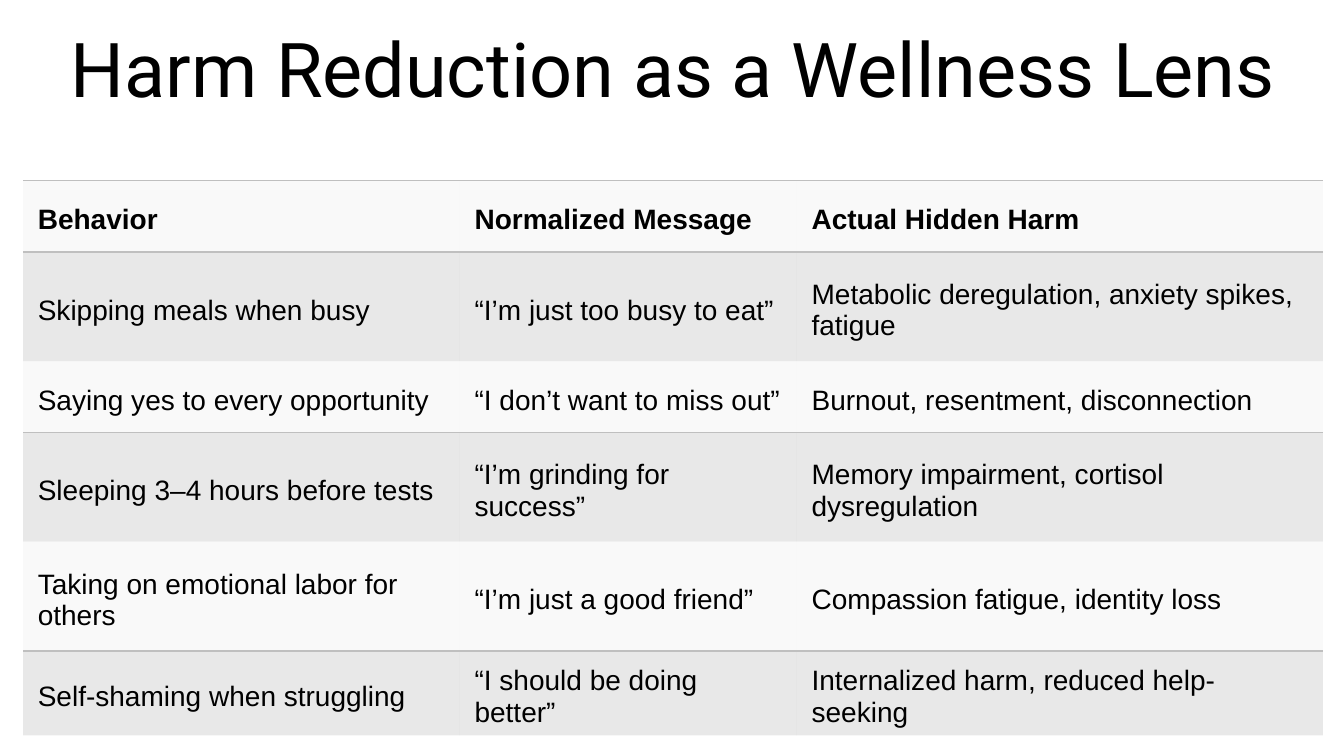
from lxml.etree import SubElement
from pptx import Presentation
from pptx.dml.color import RGBColor
from pptx.enum.text import MSO_ANCHOR, PP_ALIGN
from pptx.oxml.ns import qn
from pptx.util import Emu, Pt

NO_STYLE = "{2D5ABB26-0587-4C30-8999-92F81FD0307C}"
BLACK, WHITE, PALE, GREY = "000000", "FFFFFF", "F2F2F2", "BFBFBF"
COLUMN_WIDTHS = [416, 321, 501]
ROW_HEIGHTS = [68, 104, 68, 104, 104, 80]
ROWS = [
    ["Behavior", "Normalized Message", "Actual Hidden Harm"],
    ["Skipping meals when busy", "“I’m just too busy to eat”",
     "Metabolic deregulation, anxiety spikes, fatigue"],
    ["Saying yes to every opportunity", "“I don’t want to miss out”",
     "Burnout, resentment, disconnection"],
    ["Sleeping 3–4 hours before tests", "“I’m grinding for success”",
     "Memory impairment, cortisol dysregulation"],
    ["Taking on emotional labor for others", "“I’m just a good friend”",
     "Compassion fatigue, identity loss"],
    ["Self-shaming when struggling", "“I should be doing better”",
     "Internalized harm, reduced help-seeking"],
]


def px(n):
    return Emu(n * 9525)


def rgb(color):
    return RGBColor.from_string(color)


def set_font(p, name, size, bold=False):
    p.font.name = name
    p.font.size = Pt(size)
    p.font.bold = bold
    p.font.color.rgb = rgb(BLACK)


def add_title(s, text):
    title = s.shapes.title
    title.left, title.top, title.width, title.height = px(1), px(14), px(1280), px(100)
    tf = title.text_frame
    tf.text = text
    tf.word_wrap = True
    tf.vertical_anchor = MSO_ANCHOR.MIDDLE
    p = tf.paragraphs[0]
    p.alignment = PP_ALIGN.CENTER
    set_font(p, "Roboto", 54)


def add_border(cell, side):
    ln = SubElement(cell._tc.get_or_add_tcPr(), qn(f"a:{side}"), w=str(Pt(1)))
    SubElement(SubElement(ln, qn("a:solidFill")), qn("a:srgbClr"), val=GREY)


def fill_cell(cell, color, opacity):
    cell.fill.solid()
    cell.fill.fore_color.rgb = rgb(color)
    clr = cell._tc.tcPr.find(f"{qn('a:solidFill')}/{qn('a:srgbClr')}")
    SubElement(clr, qn("a:alpha"), val=str(opacity * 1000))


def format_cell(cell, text, row):
    cell.text = text
    cell.vertical_anchor = MSO_ANCHOR.MIDDLE
    cell.margin_left = cell.margin_top = cell.margin_right = px(14)
    cell.margin_bottom = px(7)
    set_font(cell.text_frame.paragraphs[0], "Arial", 20, bold=row == 0)
    # Pale rows are ruled below, and the header above too
    if row == 0:
        add_border(cell, "lnT")
    if row % 2 == 0:
        add_border(cell, "lnB")
        fill_cell(cell, PALE, 45)
    else:
        fill_cell(cell, GREY, 35)


def add_harm_table(s):
    frame = s.shapes.add_table(len(ROWS), len(COLUMN_WIDTHS), px(22), px(172),
                               px(sum(COLUMN_WIDTHS)), px(sum(ROW_HEIGHTS)))
    table = frame.table
    table.horz_banding = False
    table._tbl.tblPr.find(qn("a:tableStyleId")).text = NO_STYLE
    for column, width in zip(table.columns, COLUMN_WIDTHS):
        column.width = px(width)
    for i, (texts, height) in enumerate(zip(ROWS, ROW_HEIGHTS)):
        table.rows[i].height = px(height)
        for j, text in enumerate(texts):
            format_cell(table.cell(i, j), text, i)


def main():
    prs = Presentation()
    prs.slide_width, prs.slide_height = px(1280), px(720)
    s = prs.slides.add_slide(prs.slide_layouts[5])
    s.background.fill.solid()
    s.background.fill.fore_color.rgb = rgb(WHITE)
    add_title(s, "Harm Reduction as a Wellness Lens")
    add_harm_table(s)
    prs.save("out.pptx")


if __name__ == "__main__":
    main()
